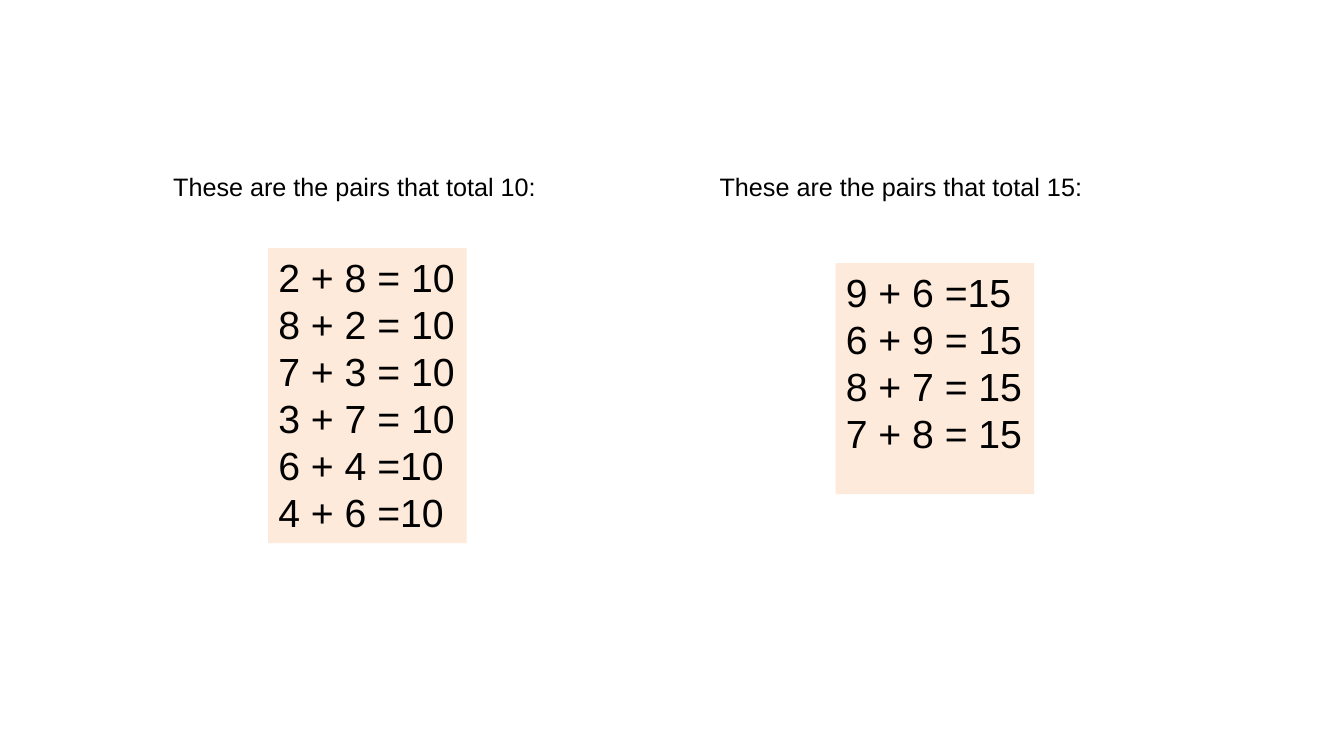
from dataclasses import dataclass

from pptx import Presentation
from pptx.dml.color import RGBColor
from pptx.enum.text import MSO_ANCHOR, MSO_AUTO_SIZE, PP_ALIGN
from pptx.oxml.ns import qn
from pptx.shapes.placeholder import SlidePlaceholder
from pptx.util import Cm, Pt
from lxml.etree import SubElement


@dataclass(frozen=True)
class Theme:
    font: str = "Arial"
    text: RGBColor = RGBColor(0x00, 0x00, 0x00)
    panel: RGBColor = RGBColor(0xFD, 0xEA, 0xDA)
    heading_size: int = 18
    sum_size: int = 28


@dataclass(frozen=True)
class Box:
    """Place of a text box, in centimetres."""
    left: float
    top: float
    width: float
    height: float


@dataclass(frozen=True)
class PairGroup:
    heading_idx: int
    sums_idx: int
    heading: str
    heading_box: Box
    sums: tuple[str, ...]
    sums_box: Box


THEME = Theme()
COMPARISON_LAYOUT = 4
GROUPS = (
    PairGroup(1, 2, "These are the pairs that total 10:", Box(4.11, 4.19, 9.73, 1.02),
              ("2 + 8 = 10", "8 + 2 = 10", "7 + 3 = 10",
               "3 + 7 = 10", "6 + 4 =10", "4 + 6 =10"),
              Box(6.76, 6.25, 5, 7.44)),
    PairGroup(3, 4, "These are the pairs that total 15:", Box(17.88, 4.19, 9.73, 1.02),
              ("9 + 6 =15", "6 + 9 = 15", "8 + 7 = 15", "7 + 8 = 15"),
              Box(21.06, 6.63, 5, 5.82)),
)


def fill_placeholder(sp: SlidePlaceholder, box: Box, text: str, size: int) -> None:
    """Move a placeholder and set its lines without bullets or indents."""
    sp.left, sp.top = Cm(box.left), Cm(box.top)
    sp.width, sp.height = Cm(box.width), Cm(box.height)
    tf = sp.text_frame
    tf.text = text
    tf.word_wrap = True
    tf.auto_size = MSO_AUTO_SIZE.NONE
    tf.vertical_anchor = MSO_ANCHOR.TOP
    tf.margin_right = 0
    for p in tf.paragraphs:
        p.alignment = PP_ALIGN.LEFT
        p.space_before = Pt(0)
        pPr = p._p.get_or_add_pPr()
        pPr.set("marL", "0")
        pPr.set("indent", "0")
        SubElement(pPr, qn("a:buNone"))
        for r in p.runs:
            r.font.name = THEME.font
            r.font.size = Pt(size)
            r.font.bold = False
            r.font.color.rgb = THEME.text


def main() -> None:
    prs = Presentation()
    prs.slide_width, prs.slide_height = Cm(33.87), Cm(19.05)
    s = prs.slides.add_slide(prs.slide_layouts[COMPARISON_LAYOUT])
    title = s.shapes.title.element
    title.getparent().remove(title)
    holders = {sp.placeholder_format.idx: sp for sp in s.placeholders}
    for group in GROUPS:
        fill_placeholder(holders[group.heading_idx], group.heading_box,
                         group.heading, THEME.heading_size)
        panel = holders[group.sums_idx]
        fill_placeholder(panel, group.sums_box, "\n".join(group.sums), THEME.sum_size)
        panel.fill.solid()
        panel.fill.fore_color.rgb = THEME.panel
    prs.save("out.pptx")


if __name__ == "__main__":
    main()
